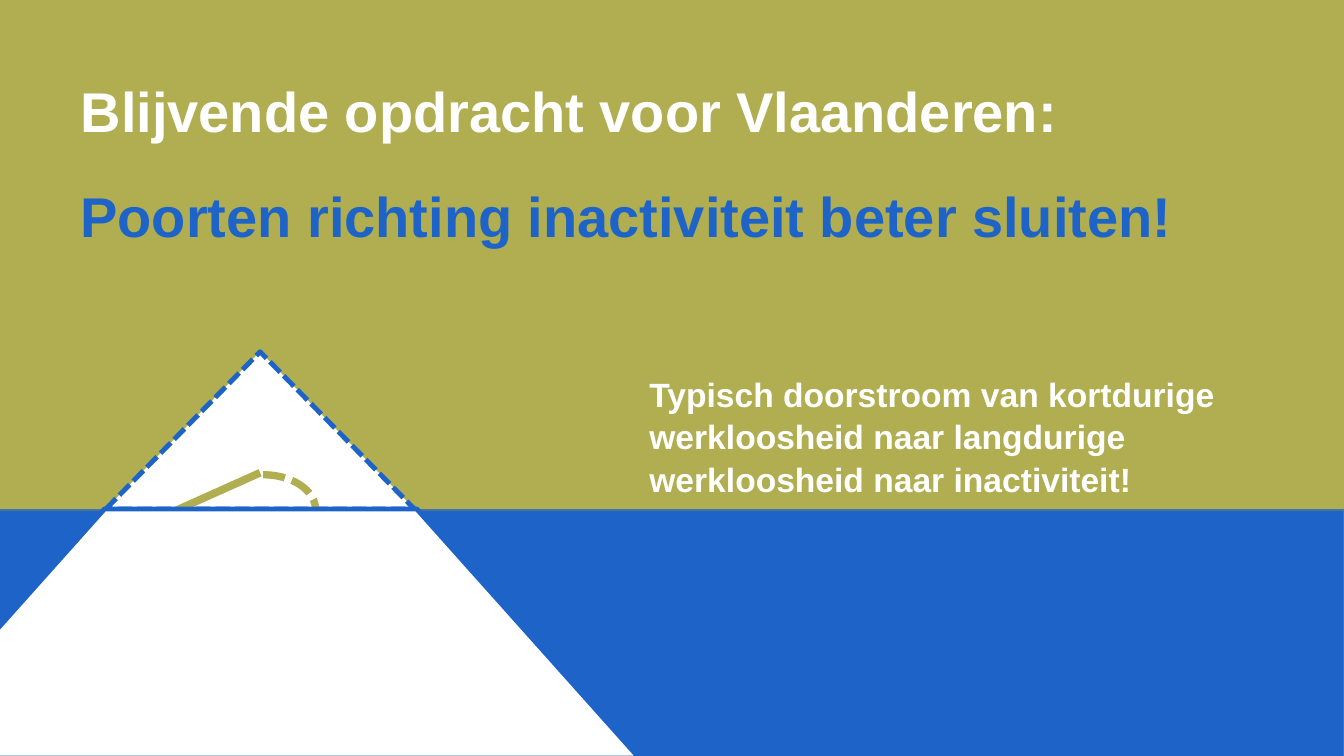
"""Build the slide about closing the gates towards inactivity."""
from dataclasses import dataclass
from typing import Any, Optional

from lxml import etree
from pptx import Presentation
from pptx.dml.color import RGBColor
from pptx.enum import dml, shapes, text
from pptx.oxml import ns
from pptx.util import Inches, Pt

OLIVE = RGBColor(0xB0, 0xAE, 0x50)
BLUE = RGBColor(0x1E, 0x64, 0xC8)
STEEL = RGBColor(0x43, 0x73, 0x9E)
WHITE = RGBColor(0xFF, 0xFF, 0xFF)
DASH = dml.MSO_LINE.SQUARE_DOT
Box = tuple[float, float, float, float]


@dataclass
class Label:
    """Text with its place and format."""
    words: str
    box: Box
    size: int
    color: RGBColor
    wrap: bool = False
    anchor: Any = text.MSO_ANCHOR.MIDDLE
    spacing: float = 1.0
    after: int = 0


@dataclass
class Figure:
    """Preset shape with its fill and outline."""
    kind: Any
    box: Box
    fill: Optional[RGBColor]
    line: RGBColor
    width: float
    dash: Any = None
    adjust: Optional[float] = None


TITLE = Label("Blijvende opdracht voor Vlaanderen:", (0.7, 0.71, 10.14, 0.77), 40, WHITE)
SUBTITLE = Label("Poorten richting inactiviteit beter sluiten!",
                 (0.7, 1.75, 11.14, 0.77), 40, BLUE)
REMARK = Label("Typisch doorstroom van kortdurige werkloosheid naar langdurige "
               "werkloosheid naar inactiviteit!", (6.34, 3.69, 7, 1.31), 24, WHITE,
               True, text.MSO_ANCHOR.BOTTOM, 1.05, 12)

BAND = Figure(shapes.MSO_SHAPE.RECTANGLE, (-0.13, 5.06, 13.46, 2.47), BLUE, STEEL, 1)
ROOF = Figure(shapes.MSO_SHAPE.ISOSCELES_TRIANGLE, (1.05, 3.49, 3.06, 1.56),
              WHITE, BLUE, 3.5, DASH)
SWING = Figure(shapes.MSO_SHAPE.ARC, (2.09, 4.71, 1.04, 0.69), None, OLIVE, 5.25, DASH)
BASE = Figure(shapes.MSO_SHAPE.TRAPEZOID, (-1.17, 5.05, 7.51, 2.47),
              WHITE, BLUE, 3.5, adjust=0.893)


def assign(target: Any, values: dict[str, Any]) -> None:
    """Set each named attribute on the target."""
    for name, value in values.items():
        setattr(target, name, value)


def write_label(sp: Any, label: Label) -> None:
    """Place and format one text shape."""
    assign(sp, dict(zip(("left", "top", "width", "height"), map(Inches, label.box))))
    tf = sp.text_frame
    tf.text = label.words
    assign(tf, {"word_wrap": label.wrap, "vertical_anchor": label.anchor,
                "auto_size": text.MSO_AUTO_SIZE.SHAPE_TO_FIT_TEXT})
    p = tf.paragraphs[0]
    assign(p, {"alignment": text.PP_ALIGN.LEFT, "line_spacing": label.spacing,
               "space_before": Pt(0), "space_after": Pt(label.after)})
    r = p.runs[0]
    assign(r.font, {"name": "Arial", "size": Pt(label.size), "bold": True})
    r.font.color.rgb = label.color


def remove_bullet(p: Any) -> None:
    """Turn off the bullet and indent of a paragraph."""
    pPr = p._p.get_or_add_pPr()
    pPr.set("marL", "0")
    pPr.set("indent", "0")
    etree.SubElement(pPr, ns.qn("a:buNone"))


def draw_figure(s: Any, figure: Figure) -> None:
    """Draw one preset shape."""
    sp = s.shapes.add_shape(figure.kind, *map(Inches, figure.box))
    sp.shadow.inherit = False
    if figure.adjust is not None:
        sp.adjustments[0] = figure.adjust
    if figure.fill is None:
        sp.fill.background()
    else:
        sp.fill.solid()
        sp.fill.fore_color.rgb = figure.fill
    sp.line.color.rgb = figure.line
    assign(sp.line, {"width": Pt(figure.width), "dash_style": figure.dash})


def draw_gate(s: Any) -> None:
    """Draw the half-open gate leaf."""
    gate = s.shapes.add_connector(shapes.MSO_CONNECTOR.STRAIGHT,
                                  *map(Inches, (1.71, 5.08, 2.58, 4.69)))
    gate.line.color.rgb = OLIVE
    gate.line.width = Pt(5.5)
    etree.SubElement(gate._element.spPr, ns.qn("a:effectLst"))


def main() -> None:
    """Assemble and save the slide."""
    prs = Presentation()
    assign(prs, {"slide_width": Inches(13.33), "slide_height": Inches(7.5)})
    s = prs.slides.add_slide(prs.slide_layouts[1])
    s.background.fill.solid()
    s.background.fill.fore_color.rgb = OLIVE
    body = s.placeholders[1]
    write_label(s.shapes.title, TITLE)
    write_label(body, REMARK)
    remove_bullet(body.text_frame.paragraphs[0])
    draw_figure(s, BAND)
    write_label(s.shapes.add_textbox(*map(Inches, SUBTITLE.box)), SUBTITLE)
    draw_figure(s, ROOF)
    draw_gate(s)
    draw_figure(s, SWING)
    draw_figure(s, BASE)
    prs.save("out.pptx")


if __name__ == "__main__":
    main()
